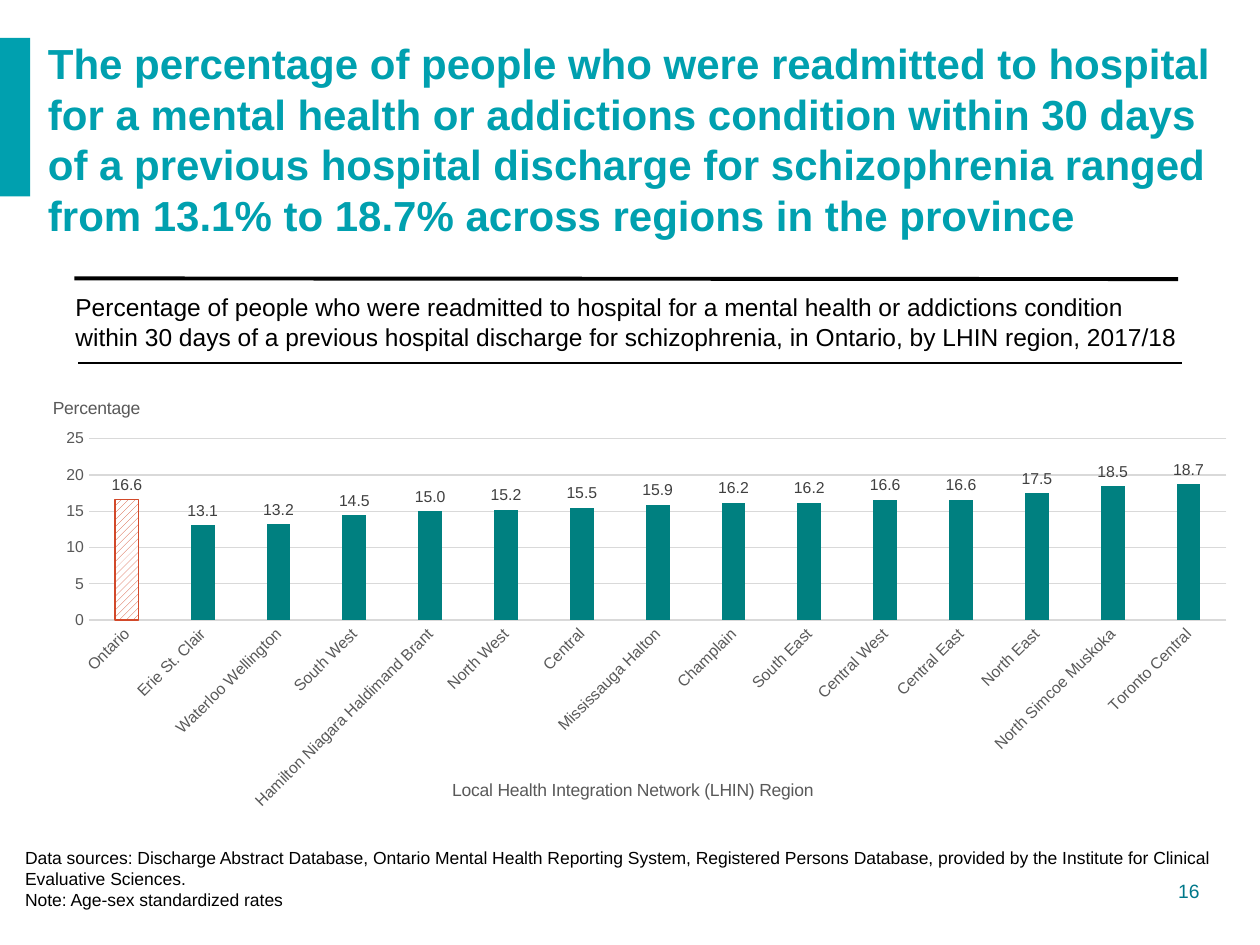
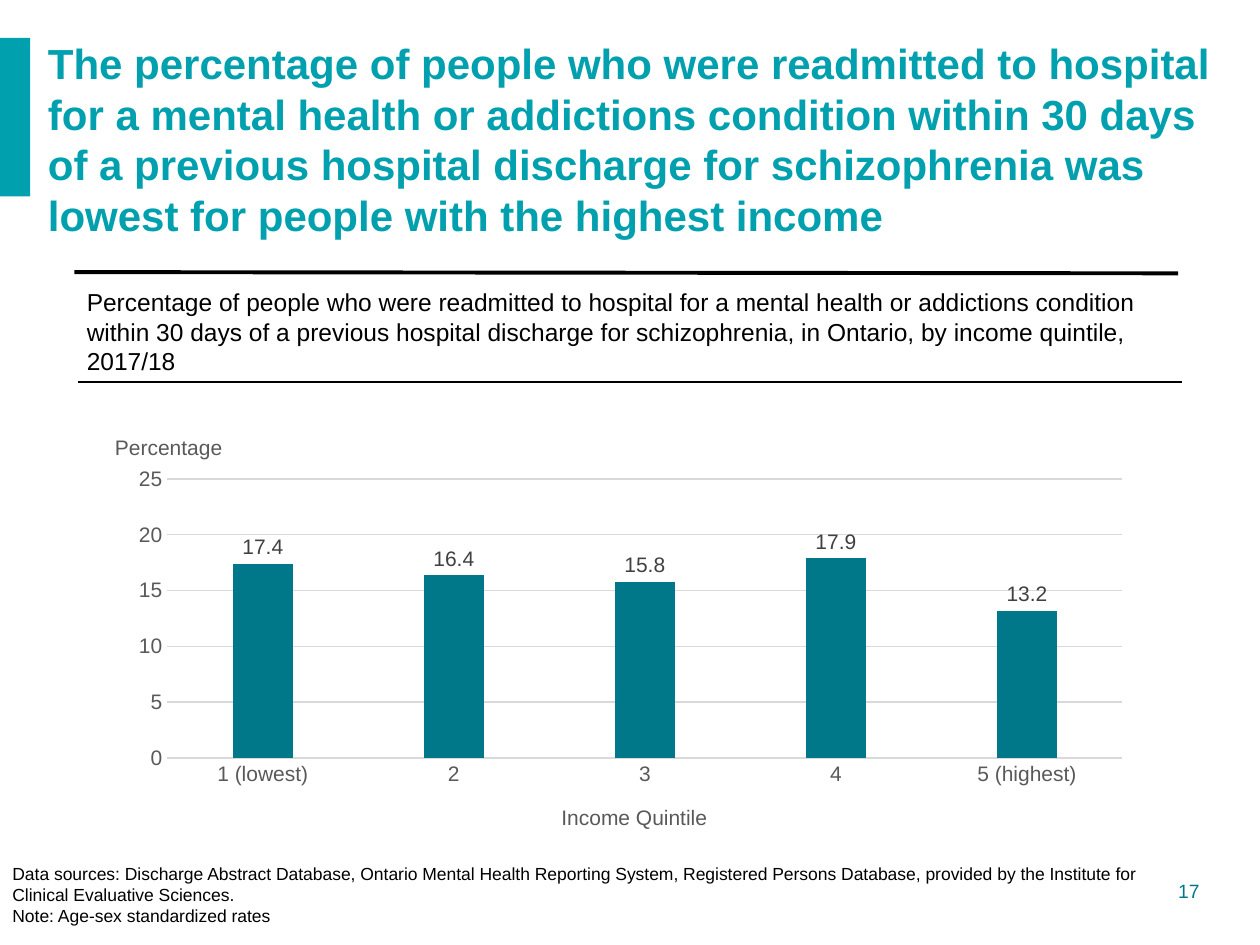
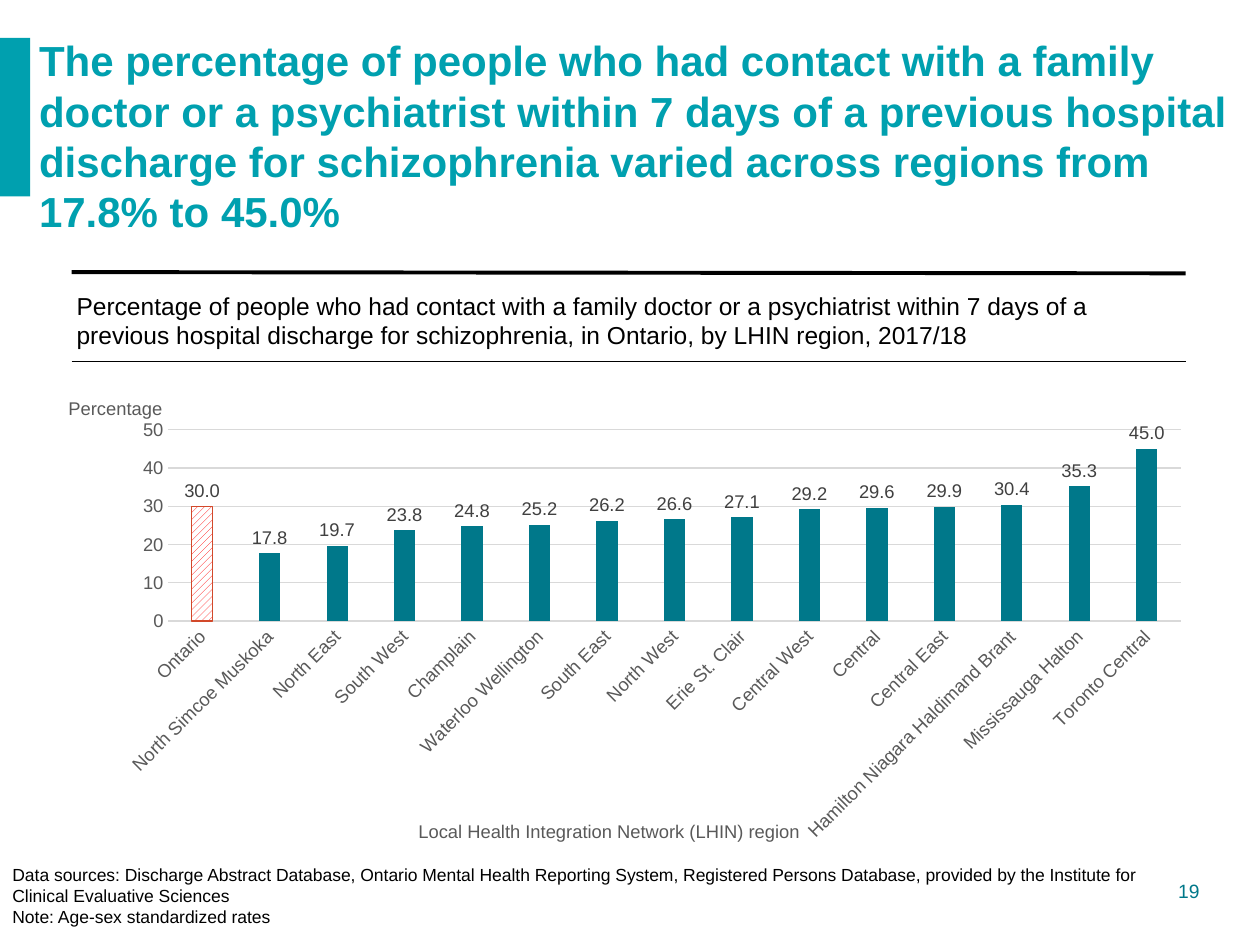
from lxml.etree import SubElement
from pptx import Presentation
from pptx.chart.data import CategoryChartData
from pptx.dml.color import RGBColor
from pptx.enum.chart import XL_CHART_TYPE as ChartType, XL_LABEL_POSITION as LabelPosition
from pptx.enum.chart import XL_TICK_MARK as TickMark
from pptx.enum.dml import MSO_PATTERN as Pattern
from pptx.enum.shapes import MSO_CONNECTOR as Connector, MSO_SHAPE as Shape
from pptx.enum.text import MSO_ANCHOR as Anchor, MSO_AUTO_SIZE as AutoSize, PP_ALIGN as Align
from pptx.oxml.ns import qn
from pptx.oxml.xmlchemy import OxmlElement
from pptx.util import Pt

FONT = "Arial"
COLORS = {
    "accent": "00A0AF", "deep": "00788A", "teal": "008080", "black": "000000",
    "white": "FFFFFF", "axis": "595959", "label": "404040", "grid": "D9D9D9",
    "rust": "D2492A", "red": "FF0000",
}
SOURCES = (
    "Data sources: Discharge Abstract Database, Ontario Mental Health Reporting System, "
    "Registered Persons Database, provided by the Institute for Clinical Evaluative Sciences"
)
NOTE = "Note: Age-sex standardized rates"
READMITTED = (
    "ercentage of people who were readmitted to hospital for a mental health or addictions "
    "condition within 30 days of a previous hospital discharge for schizophrenia"
)
CONTACT = (
    "ercentage of people who had contact with a family doctor or a psychiatrist within 7 days "
    "of a previous hospital discharge for schizophrenia"
)

SLIDES = [
    {
        "number": 16,
        "headline": f"The p{READMITTED} ranged from 13.1% to 18.7% across regions in the province",
        "headline_box": (20.2, 18, 693.4, 122.4),
        "caption": f"P{READMITTED}, in Ontario, by LHIN region, 2017/18",
        "caption_box": (36, 163.4, 646.6, 41),
        "rules": [(42.5, 159.1, 673.2, 159.5, 2.25), (44.6, 207.4, 675.4, 207.4, 1)],
        "sources": SOURCES + ".",
        "sources_box": (7.2, 480.2, 702, 43.9),
        "chart_box": (10.8, 210.2, 702, 287.3),
        "plot": (0.057, 0.141, 0.926, 0.361),
        "rates": {
            "Ontario": 16.6, "Erie St. Clair": 13.1, "Waterloo Wellington": 13.2,
            "South West": 14.5, "Hamilton Niagara Haldimand Brant": 15, "North West": 15.2,
            "Central": 15.5, "Mississauga Halton": 15.9, "Champlain": 16.2,
            "South East": 16.2, "Central West": 16.6, "Central East": 16.6,
            "North East": 17.5, "North Simcoe Muskoka": 18.5, "Toronto Central": 18.7,
        },
        "bar_color": "teal", "hatch": "rust", "slanted": True,
        "scale": (25, 5), "title_size": 10, "label_size": 9,
        "category_title": ("Local Health Integration Network (LHIN) Region", 0.35, 0.81),
        "value_title": ("Percentage", 0.025, 0.05),
    },
    {
        "number": 17,
        "headline": f"The p{READMITTED} was lowest for people with the highest income",
        "headline_box": (20.2, 18, 693.4, 122.4),
        "caption": f"P{READMITTED}, in Ontario, by income quintile, 2017/18",
        "caption_box": (42.5, 160.6, 632.9, 58.3),
        "rules": [(42.5, 155.5, 673.2, 156.2, 2.25), (44.6, 218.2, 675.4, 218.2, 1)],
        "sources": SOURCES + ".",
        "sources_box": (0, 489.6, 684.7, 43.9),
        "chart_box": (61.2, 228.2, 593.3, 253.4),
        "plot": (0.058, 0.18, 0.92, 0.629),
        "rates": {"1 (lowest)": 17.4, "2": 16.4, "3": 15.8, "4": 17.9, "5 (highest)": 13.2},
        "bar_color": "deep", "hatch": None, "slanted": False,
        "scale": (25, 5), "title_size": 12, "label_size": 12,
        "category_title": ("Income Quintile", 0.434, 0.905),
        "value_title": ("Percentage", 0.004, 0.07),
    },
    {
        "number": 19,
        "headline": f"The p{CONTACT} varied across regions from 17.8% to 45.0%",
        "headline_box": (15.1, 21.6, 699.8, 111.6),
        "caption": f"P{CONTACT}, in Ontario, by LHIN region, 2017/18",
        "caption_box": (36.7, 162.7, 640.8, 41),
        "rules": [(41, 155.5, 677.5, 156.2, 2.25), (41, 206.6, 677.5, 206.6, 1)],
        "sources": SOURCES,
        "sources_box": (0, 490.3, 677.5, 43.9),
        "chart_box": (23.8, 214.6, 671, 303.1),
        "plot": (0.108, 0.102, 0.862, 0.361),
        "rates": {
            "Ontario": 30, "North Simcoe Muskoka": 17.8, "North East": 19.7,
            "South West": 23.8, "Champlain": 24.8, "Waterloo Wellington": 25.2,
            "South East": 26.2, "North West": 26.6, "Erie St. Clair": 27.1,
            "Central West": 29.2, "Central": 29.6, "Central East": 29.9,
            "Hamilton Niagara Haldimand Brant": 30.4, "Mississauga Halton": 35.3,
            "Toronto Central": 45,
        },
        "bar_color": "deep", "hatch": "red", "slanted": True,
        "scale": (50, 10), "title_size": 10.5, "label_size": 10.5,
        "category_title": ("Local Health Integration Network (LHIN) region", 0.318, 0.83),
        "value_title": ("Percentage", 0.02, 0.032),
    },
]


def rgb(name):
    return RGBColor.from_string(COLORS[name])


def points(box):
    return [Pt(length) for length in box]


def set_font(font, size, color, bold=False):
    font.name = FONT
    font.size = Pt(size)
    font.bold = bold
    font.color.rgb = rgb(color)


def write(frame, *lines, size, color="black", bold=False, align=Align.LEFT):
    for index, line in enumerate(lines):
        paragraph = frame.add_paragraph() if index else frame.paragraphs[0]
        paragraph.alignment = align
        run = paragraph.add_run()
        run.text = line
        set_font(run.font, size, color, bold)


def add_text(slide, box, *lines, **style):
    frame = slide.shapes.add_textbox(*points(box)).text_frame
    frame.word_wrap = True
    write(frame, *lines, **style)


def add_headline(slide, text, box):
    headline = slide.shapes.title
    headline.left, headline.top, headline.width, headline.height = points(box)
    frame = headline.text_frame
    frame.word_wrap = True
    frame.auto_size = AutoSize.NONE
    frame.vertical_anchor = Anchor.MIDDLE
    write(frame, text, size=24, color="accent", bold=True)


def add_band(slide):
    band = slide.shapes.add_shape(Shape.RECTANGLE, *points((0, 21.6, 17.3, 90.7)))
    band.shadow.inherit = False
    band.fill.solid()
    band.fill.fore_color.rgb = rgb("accent")
    band.line.fill.background()


def add_rule(slide, x1, y1, x2, y2, weight):
    rule = slide.shapes.add_connector(Connector.STRAIGHT, *points((x1, y1, x2, y2)))
    rule.line.color.rgb = rgb("black")
    rule.line.width = Pt(weight)
    rule._element.spPr.append(OxmlElement("a:effectLst"))


def set_layout(parent, position, **settings):
    for old in parent.findall(qn("c:layout")):
        parent.remove(old)
    layout = OxmlElement("c:layout")
    manual = SubElement(layout, qn("c:manualLayout"))
    for tag, value in settings.items():
        SubElement(manual, qn(f"c:{tag}")).set("val", str(value))
    parent.insert(position, layout)


def rotate(element, angle):
    body = element.find(".//" + qn("a:bodyPr"))
    body.set("rot", str(angle * 60000))
    body.set("vert", "horz")


def style_axis(axis, title, title_size, label_size):
    text, x, y = title
    write(axis.axis_title.text_frame, text, size=title_size, color="axis")
    title_element = axis.axis_title._element
    rotate(title_element, 0)
    set_layout(title_element, 1, xMode="edge", yMode="edge", x=x, y=y)
    axis.major_tick_mark = axis.minor_tick_mark = TickMark.NONE
    set_font(axis.tick_labels.font, label_size, "axis")


def add_rate_chart(slide, content):
    rates = content["rates"]
    data = CategoryChartData(number_format="0.0")
    data.categories = list(rates)
    data.add_series("Series 1", list(rates.values()))
    chart = slide.shapes.add_chart(
        ChartType.COLUMN_CLUSTERED, *points(content["chart_box"]), data).chart
    chart.has_title = False
    chart.has_legend = False
    set_font(chart.font, content["title_size"], "black")

    x, y, w, h = content["plot"]
    set_layout(chart._chartSpace.chart.plotArea, 0, layoutTarget="inner",
               xMode="edge", yMode="edge", x=x, y=y, w=w, h=h)

    sizes = content["title_size"], content["label_size"]
    regions, percentages = chart.category_axis, chart.value_axis
    style_axis(regions, content["category_title"], *sizes)
    style_axis(percentages, content["value_title"], *sizes)
    rotate(regions._element.find(qn("c:txPr")), -45 if content["slanted"] else 0)
    regions.format.line.color.rgb = rgb("grid")
    regions.format.line.width = Pt(0.75)
    percentages.format.line.fill.background()
    percentages.minimum_scale = 0
    percentages.maximum_scale, percentages.major_unit = content["scale"]
    percentages.tick_labels.number_format = "0"
    percentages.tick_labels.number_format_is_linked = False
    gridlines = percentages.major_gridlines.format.line
    gridlines.color.rgb = rgb("grid")
    gridlines.width = Pt(0.75)

    plot = chart.plots[0]
    plot.gap_width = 219
    plot.overlap = -27
    plot.vary_by_categories = False
    bars = plot.series[0]
    bars.invert_if_negative = False
    bars.format.fill.solid()
    bars.format.fill.fore_color.rgb = rgb(content["bar_color"])
    labels = bars.data_labels
    labels.show_value = True
    labels.position = LabelPosition.OUTSIDE_END
    labels.number_format = "0.0"
    labels.number_format_is_linked = False
    set_font(labels.font, content["label_size"], "label")
    if content["hatch"]:
        hatch_bar(bars.points[0], content["hatch"])


def hatch_bar(bar, color):
    fill = bar.format.fill
    fill.patterned()
    fill.pattern = Pattern.WIDE_UPWARD_DIAGONAL
    fill.fore_color.rgb = rgb(color)
    fill.back_color.rgb = rgb("white")
    bar.format.line.color.rgb = rgb("rust")
    bar.format.line.width = Pt(0.75)


def build_slide(deck, content):
    slide = deck.slides.add_slide(deck.slide_layouts[5])
    add_text(slide, (608.4, 499, 84.2, 20.9), str(content["number"]),
             size=11, color="deep", align=Align.RIGHT)
    add_band(slide)
    add_headline(slide, content["headline"], content["headline_box"])
    add_text(slide, content["caption_box"], content["caption"], size=14)
    for rule in content["rules"]:
        add_rule(slide, *rule)
    add_rate_chart(slide, content)
    add_text(slide, content["sources_box"], content["sources"], NOTE, size=10)


def main():
    deck = Presentation()
    deck.slide_width, deck.slide_height = Pt(720), Pt(540)
    for content in SLIDES:
        build_slide(deck, content)
    deck.save("out.pptx")


if __name__ == "__main__":
    main()
